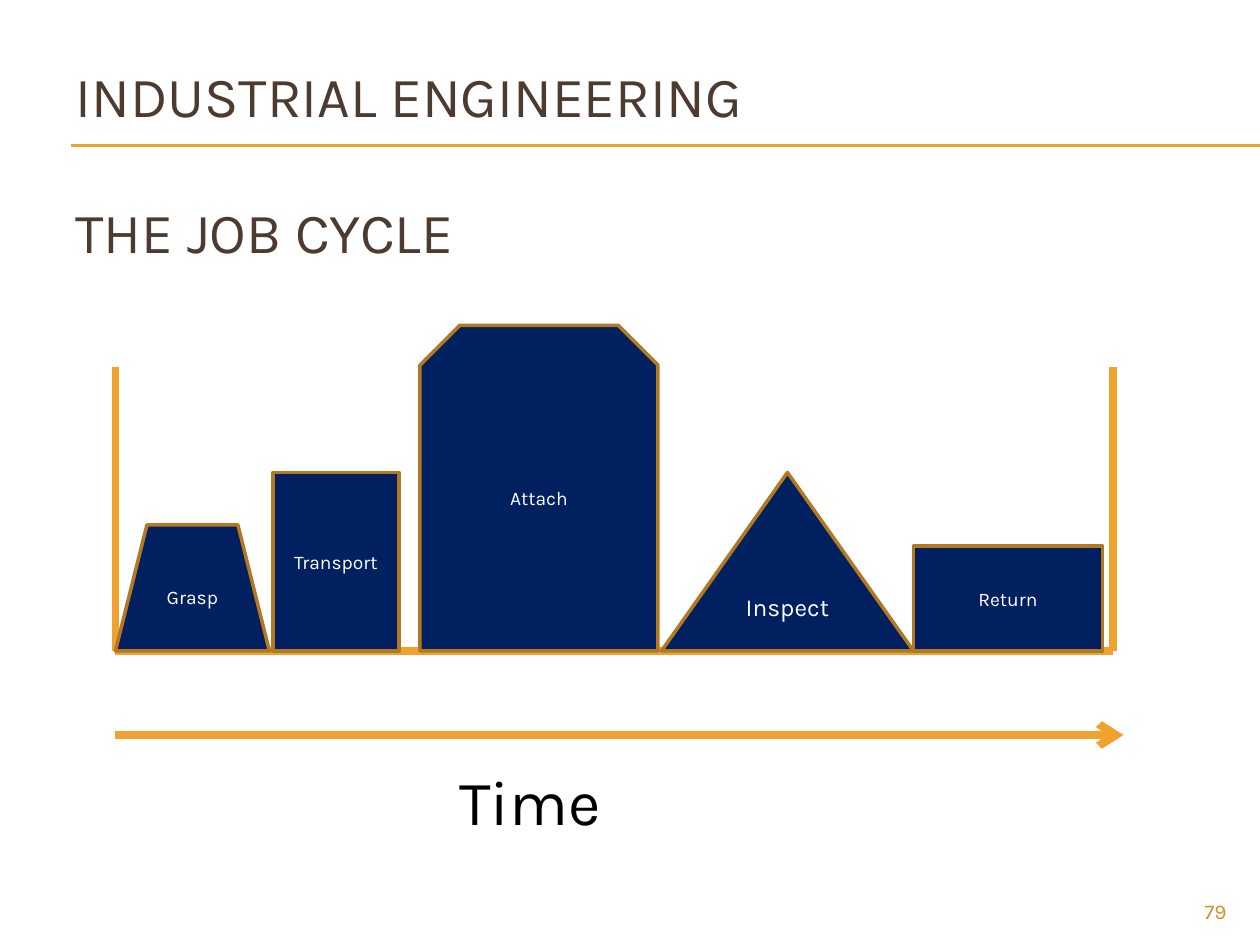
from lxml import etree
from pptx import Presentation
from pptx.dml.color import RGBColor
from pptx.enum.shapes import MSO_CONNECTOR, MSO_SHAPE
from pptx.enum.text import MSO_ANCHOR, MSO_AUTO_SIZE, PP_ALIGN
from pptx.oxml.ns import qn
from pptx.util import Pt

STRAIGHT = MSO_CONNECTOR.STRAIGHT
RECTANGLE = MSO_SHAPE.RECTANGLE
TRAPEZOID = MSO_SHAPE.TRAPEZOID
SNIPPED = MSO_SHAPE.SNIP_2_SAME_RECTANGLE
TRIANGLE = MSO_SHAPE.ISOSCELES_TRIANGLE
MIDDLE, TOP = MSO_ANCHOR.MIDDLE, MSO_ANCHOR.TOP
NO_FIT = MSO_AUTO_SIZE.NONE
LEFT, CENTER, RIGHT = PP_ALIGN.LEFT, PP_ALIGN.CENTER, PP_ALIGN.RIGHT

FONT = "Karla"
COLORS = {
    "title": "4E3B30",
    "accent": "F0A22E",
    "number": "D48F29",
    "block": "002060",
    "outline": "B27822",
    "light": "FFFFFF",
    "dark": "000000",
}


def rgb(name):
    return RGBColor.from_string(COLORS[name])


class SlideBuilder:
    def __init__(self, slide):
        self.slide = slide

    def set_text(self, shape, text, size, color, align, anchor):
        frame = shape.text_frame
        frame.text = text
        frame.word_wrap = True
        frame.auto_size = NO_FIT
        frame.vertical_anchor = anchor
        for paragraph in frame.paragraphs:
            paragraph.alignment = align
            for run in paragraph.runs:
                run.font.name = FONT
                run.font.size = Pt(size)
                run.font.color.rgb = rgb(color)

    def title(self, text, left, top, width, height, size, gap):
        shape = self.slide.shapes.title
        shape.left, shape.top = Pt(left), Pt(top)
        shape.width, shape.height = Pt(width), Pt(height)
        self.set_text(shape, text, size, "title", LEFT, MIDDLE)
        for paragraph in shape.text_frame.paragraphs[1:]:
            paragraph.space_before = Pt(gap)

    def text(self, text, left, top, width, height, size, color, align):
        box = self.slide.shapes.add_textbox(Pt(left), Pt(top), Pt(width), Pt(height))
        self.set_text(box, text, size, color, align, TOP)

    def line(self, x1, y1, x2, y2, width, arrow=False):
        connector = self.slide.shapes.add_connector(STRAIGHT, Pt(x1), Pt(y1), Pt(x2), Pt(y2))
        connector.line.color.rgb = rgb("accent")
        connector.line.width = Pt(width)
        properties = connector._element.spPr
        if arrow:
            etree.SubElement(properties.find(qn("a:ln")), qn("a:tailEnd"), type="arrow")
        etree.SubElement(properties, qn("a:effectLst"))

    def block(self, kind, text, left, top, width, height, size):
        shape = self.slide.shapes.add_shape(kind, Pt(left), Pt(top), Pt(width), Pt(height))
        shape.shadow.inherit = False
        shape.fill.solid()
        shape.fill.fore_color.rgb = rgb("block")
        shape.line.color.rgb = rgb("outline")
        shape.line.width = Pt(2)
        self.set_text(shape, text, size, "light", CENTER, MIDDLE)


def main():
    presentation = Presentation()
    presentation.slide_width, presentation.slide_height = Pt(720), Pt(540)
    title_only = presentation.slide_layouts[5]
    builder = SlideBuilder(presentation.slides.add_slide(title_only))

    # Title, double rule below its first line, and slide number
    builder.title("INDUSTRIAL ENGINEERING\nTHE JOB CYCLE", 36, 30, 648, 126, 32.4, 38.5)
    for y in (82.8, 83.4):
        builder.line(40.5, y, 720, y, 0.75)
    builder.text("79", 648, 510, 60, 19.5, 12, "number", RIGHT)

    # Cycle frame and time arrow
    start, end, frame_top, base = 66, 636, 210, 372
    builder.line(start, frame_top, start, base, 4.5)
    builder.line(end, base, start, base, 4.5)
    builder.line(start, 420, 642, 420, 4.5, arrow=True)

    # Job steps, all standing on the base line
    steps = [
        (RECTANGLE, "Transport", 156, 72, 102, 11),
        (TRAPEZOID, "Grasp", 66, 88, 72, 11),
        (SNIPPED, "Attach", 240, 136, 186, 11),
        (TRIANGLE, "Inspect", 378, 144, 102, 14),
        (RECTANGLE, "Return", 522, 108, 60, 11),
    ]
    for kind, label, left, width, height, size in steps:
        builder.block(kind, label, left, base - height, width, height, size)

    # Time label and right edge of the frame
    builder.text("Time", 192, 432, 222, 51, 36, "dark", CENTER)
    builder.line(end, frame_top, end, base, 4.5)

    presentation.save("out.pptx")


if __name__ == "__main__":
    main()
